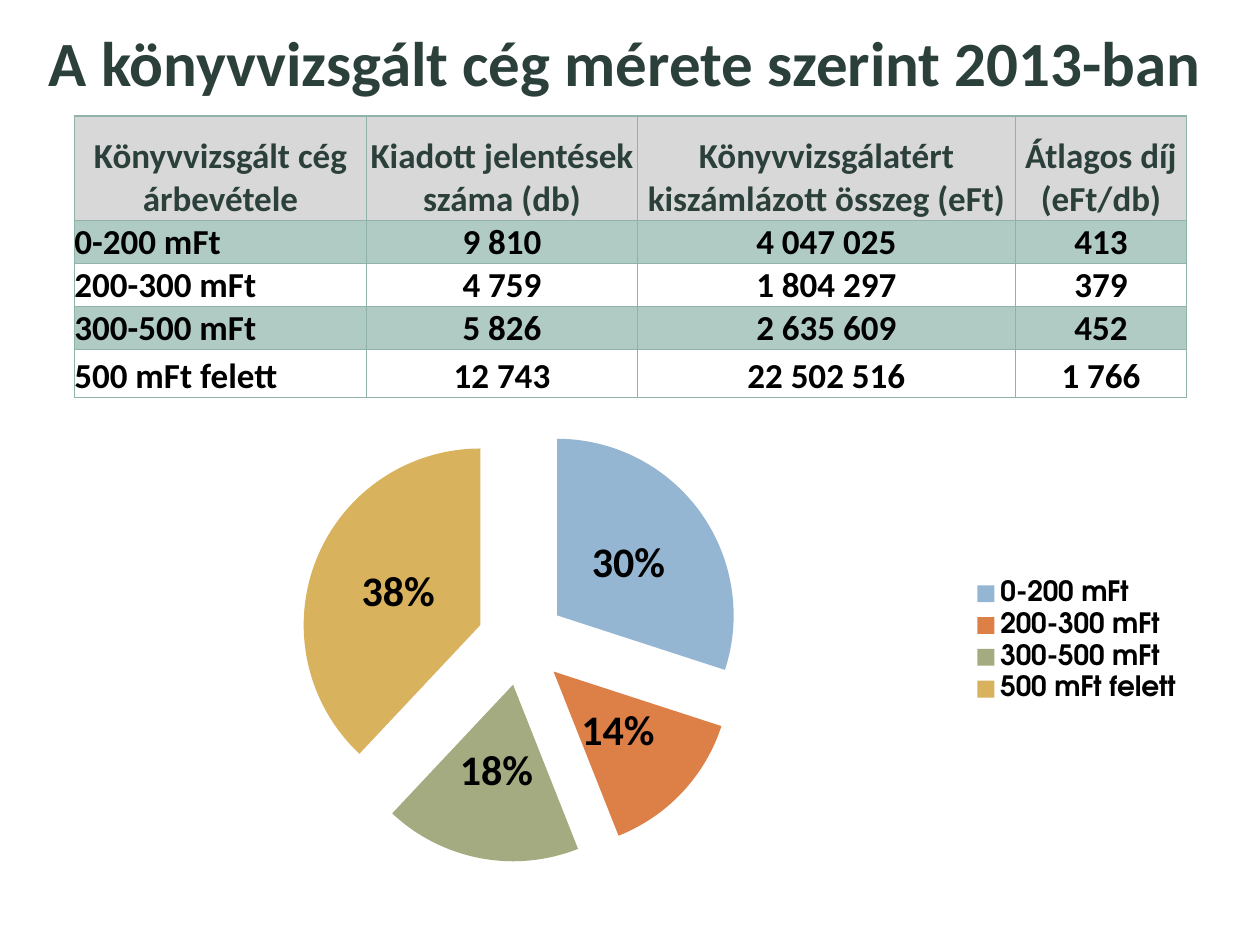
from lxml import etree
from pptx import Presentation
from pptx.chart.data import CategoryChartData
from pptx.dml.color import RGBColor
from pptx.enum.chart import XL_CHART_TYPE, XL_LABEL_POSITION, XL_LEGEND_POSITION
from pptx.enum.text import MSO_ANCHOR, PP_ALIGN
from pptx.oxml import parse_xml
from pptx.oxml.ns import nsdecls, qn
from pptx.util import Cm, Pt

COLORS = {"title": "2C403B", "text": "000000", "head": "D8D8D8", "band": "B0CAC4", "border": "8FB3AA"}
SLICES = ["94B6D2", "DD8047", "A5AB81", "D8B25C"]
ROWS = [
    ["Könyvvizsgált cég árbevétele", "Kiadott jelentések száma (db)",
     "Könyvvizsgálatért kiszámlázott összeg (eFt)", "Átlagos díj (eFt/db)"],
    ["0-200 mFt", "9 810", "4 047 025", "413"],
    ["200-300 mFt", "4 759", "1 804 297", "379"],
    ["300-500 mFt", "5 826", "2 635 609", "452"],
    ["500 mFt felett", "12 743", "22 502 516", "1 766"],
]


def set_text(tf, text, size=20, color="text", align=PP_ALIGN.CENTER):
    p = tf.paragraphs[0]
    p.alignment = align
    r = p.add_run()
    r.text = text
    set_font(r.font, size, COLORS[color])


def set_font(font, size, color, name="Calibri", bold=True):
    font.name, font.size, font.bold = name, Pt(size), bold
    font.color.rgb = RGBColor.from_string(color)


prs = Presentation()
prs.slide_width, prs.slide_height = Cm(25.4), Cm(19.05)
s = prs.slides.add_slide(prs.slide_layouts[5])

title = s.shapes.title
title.left, title.top, title.width, title.height = Cm(0.5), Cm(0.33), Cm(24.2), Cm(1.8)
title.text_frame.vertical_anchor = MSO_ANCHOR.MIDDLE
set_text(title.text_frame, "A könyvvizsgált cég mérete szerint 2013-ban", size=36, color="title")

table = s.shapes.add_table(5, 4, Cm(1.5), Cm(2.34), Cm(22.4), Cm(5.2)).table
table.first_row = table.horz_banding = False
for col, width in zip(table.columns, [5.89, 5.46, 7.62, 3.45]):
    col.width = Cm(width)
for row, height in zip(table.rows, [2.11, 0.71, 0.71, 0.71, 0.97]):
    row.height = Cm(height)

for i, row in enumerate(ROWS):
    for j, text in enumerate(row):
        cell = table.cell(i, j)
        cell.margin_left = cell.margin_right = cell.margin_top = cell.margin_bottom = 0
        cell.vertical_anchor = MSO_ANCHOR.BOTTOM
        set_text(cell.text_frame, text, color="title" if i == 0 else "text",
                 align=PP_ALIGN.LEFT if i and j == 0 else PP_ALIGN.CENTER)
        tc_pr = cell._tc.get_or_add_tcPr()
        for side in ["lnL", "lnR", "lnT", "lnB"]:
            tc_pr.append(parse_xml(
                f'<a:{side} {nsdecls("a")} w="12700"><a:solidFill>'
                f'<a:srgbClr val="{COLORS["border"]}"/></a:solidFill></a:{side}>'))
        if i in (0, 1, 3):
            cell.fill.solid()
            cell.fill.fore_color.rgb = RGBColor.from_string(COLORS["band" if i else "head"])
        else:
            cell.fill.background()

data = CategoryChartData()
data.categories = [row[0] for row in ROWS[1:]]
data.add_series("Series 1", [30, 14, 18, 38])
chart = s.shapes.add_chart(XL_CHART_TYPE.PIE, Cm(1.5), Cm(8.13), Cm(22.6), Cm(9.6), data).chart
chart.has_title = False
set_font(chart.font, 10, COLORS["text"], name="TeX Gyre Adventor", bold=False)

chart.has_legend = True
chart.legend.position = XL_LEGEND_POSITION.RIGHT
chart.legend.include_in_layout = False
set_font(chart.legend.font, 16, COLORS["text"], name="TeX Gyre Adventor")

plot = chart.plots[0]
plot.vary_by_categories = True
series = plot.series[0]
for i, color in enumerate(SLICES):
    fill = series.points[i].format.fill
    fill.solid()
    fill.fore_color.rgb = RGBColor.from_string(color)
explosion = etree.Element(qn("c:explosion"), val="25")
series._element.find(qn("c:dPt")).addprevious(explosion)

labels = series.data_labels
labels.show_percentage = True
labels.show_value = False
labels.number_format = "0%"
labels.number_format_is_linked = False
labels.position = XL_LABEL_POSITION.CENTER
set_font(labels.font, 24, COLORS["text"])

prs.save("out.pptx")
